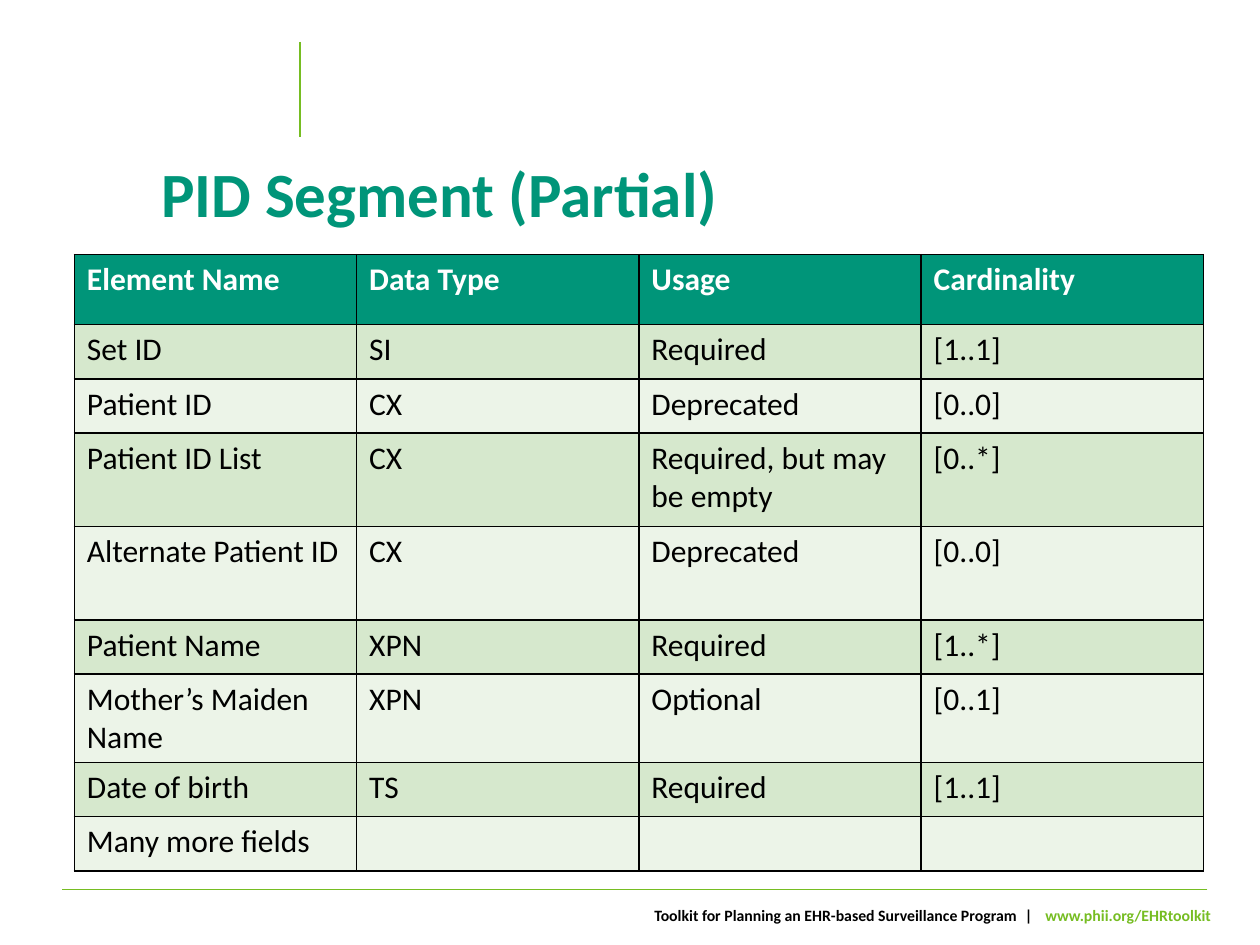
from dataclasses import dataclass

import pptx
import pptx.dml.color
import pptx.enum.shapes
import pptx.enum.text
import pptx.oxml
import pptx.oxml.ns
import pptx.util

Pt = pptx.util.Pt
Align = pptx.enum.text.PP_ALIGN
Anchor = pptx.enum.text.MSO_ANCHOR


@dataclass(frozen=True)
class Theme:
    font: str = "Calibri"
    teal: str = "009579"
    green: str = "76BD22"
    black: str = "000000"
    white: str = "FFFFFF"
    bands: tuple = ("D6E8CD", "ECF4E8")
    title_size: float = 36
    table_size: float = 18
    footer_size: float = 9
    rule_width: float = 0.75
    border_width: float = 1


@dataclass(frozen=True)
class Rule:
    start: tuple
    end: tuple


@dataclass(frozen=True)
class Field:
    name: str
    data_type: str = ""
    usage: str = ""
    cardinality: str = ""
    height: float = 31


THEME = Theme()
RULES = [Rule((171.5, 24), (171.5, 78.5)), Rule((690, 508.3), (35.5, 508.3))]
FIELDS = [
    Field("Element Name", "Data Type", "Usage", "Cardinality", 40),
    Field("Set ID", "SI", "Required", "[1..1]"),
    Field("Patient ID", "CX", "Deprecated", "[0..0]"),
    Field("Patient ID List", "CX", "Required, but may be empty", "[0..*]", 53.4),
    Field("Alternate Patient ID", "CX", "Deprecated", "[0..0]", 53.4),
    Field("Patient Name", "XPN", "Required", "[1..*]"),
    Field("Mother’s Maiden Name", "XPN", "Optional", "[0..1]"),
    Field("Date of birth", "TS", "Required", "[1..1]"),
    Field("Many more fields"),
]


def rgb(value: str) -> pptx.dml.color.RGBColor:
    return pptx.dml.color.RGBColor.from_string(value)


def format_span(span, size: float, color: str, bold: bool = True) -> None:
    span.font.name = THEME.font
    span.font.size = Pt(size)
    span.font.bold = bold
    span.font.color.rgb = rgb(color)


def draw_rule(page, rule: Rule) -> None:
    line = page.shapes.add_connector(
        pptx.enum.shapes.MSO_CONNECTOR.STRAIGHT,
        *(Pt(value) for value in rule.start + rule.end))
    line.line.color.rgb = rgb(THEME.green)
    line.line.width = Pt(THEME.rule_width)
    properties = line._element.spPr
    properties.append(pptx.oxml.parse_xml(
        f'<a:effectLst {pptx.oxml.ns.nsdecls("a")}/>'))


def add_text_box(page, left: float, top: float, width: float, height: float):
    box = page.shapes.add_textbox(Pt(left), Pt(top), Pt(width), Pt(height))
    box.text_frame.word_wrap = True
    return box


def draw_title(page) -> None:
    box = add_text_box(page, 85, 82, 602.6, 53.3)
    box.text_frame.vertical_anchor = Anchor.BOTTOM
    box.text_frame.text = "PID Segment (Partial)"
    para = box.text_frame.paragraphs[0]
    para.line_spacing = Pt(38)
    format_span(para.runs[0], THEME.title_size, THEME.teal)


def draw_footer(page) -> None:
    box = add_text_box(page, 211, 514, 488, 40)
    para = box.text_frame.paragraphs[0]
    para.alignment = Align.RIGHT
    parts = [
        ("Toolkit for Planning an EHR-based Surveillance Program", THEME.black, 0),
        (" | ", THEME.black, 2.7),
        ("www.phii.org/EHRtoolkit", THEME.green, 0),
    ]
    for text, color, tracking in parts:
        span = para.add_run()
        span.text = text
        format_span(span, THEME.footer_size, color)
        if tracking:
            span.font._element.set("spc", str(round(tracking * 100)))


def add_borders(cell) -> None:
    properties = cell._tc.get_or_add_tcPr()
    for side in ("lnL", "lnR", "lnT", "lnB"):
        properties.append(pptx.oxml.parse_xml(
            f'<a:{side} {pptx.oxml.ns.nsdecls("a")} w="{Pt(THEME.border_width)}">'
            f'<a:solidFill><a:srgbClr val="{THEME.black}"/></a:solidFill>'
            f'</a:{side}>'))


def draw_cell(cell, text: str, fill: str, color: str, bold: bool) -> None:
    add_borders(cell)
    cell.fill.solid()
    cell.fill.fore_color.rgb = rgb(fill)
    if text:
        cell.text_frame.text = text
        format_span(cell.text_frame.paragraphs[0].runs[0],
                    THEME.table_size, color, bold)


def draw_table(page, fields: list[Field]) -> None:
    height = sum(field.height for field in fields)
    table = page.shapes.add_table(
        len(fields), 4, Pt(42.5), Pt(145.5), Pt(645.2), Pt(height)).table
    table.horz_banding = False
    for column in table.columns:
        column.width = Pt(161.3)
    for index, field in enumerate(fields):
        table.rows[index].height = Pt(field.height)
        header = index == 0
        fill = THEME.teal if header else THEME.bands[(index - 1) % 2]
        color = THEME.white if header else THEME.black
        texts = (field.name, field.data_type, field.usage, field.cardinality)
        for cell, text in zip(table.rows[index].cells, texts):
            draw_cell(cell, text, fill, color, header)


def main() -> None:
    deck = pptx.Presentation()
    deck.slide_width, deck.slide_height = Pt(720), Pt(540)
    page = deck.slides.add_slide(deck.slide_layouts[6])

    # Rules and footer
    for rule in RULES:
        draw_rule(page, rule)
    draw_footer(page)

    # Title and segment table
    draw_title(page)
    draw_table(page, FIELDS)

    deck.save("out.pptx")


if __name__ == "__main__":
    main()
